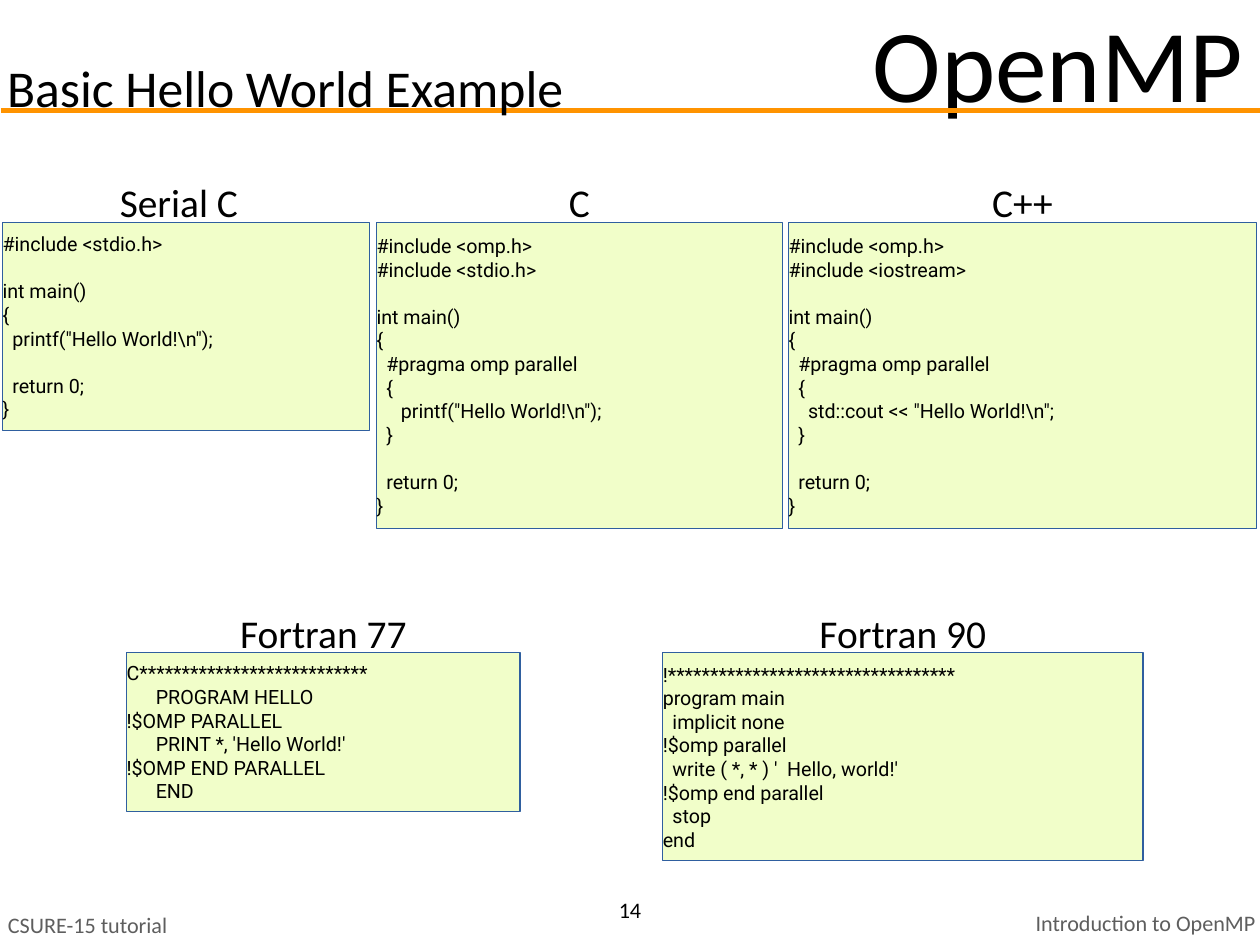
import pptx
import pptx.util
import pptx.dml.color
import pptx.enum.shapes
import pptx.enum.text
import pptx.oxml.ns
from lxml import etree

Inches, Pt = pptx.util.Inches, pptx.util.Pt
RGBColor = pptx.dml.color.RGBColor
ALIGN = pptx.enum.text.PP_ALIGN
ANCHOR = pptx.enum.text.MSO_ANCHOR
AUTO_SIZE = pptx.enum.text.MSO_AUTO_SIZE

BLACK = RGBColor(0x00, 0x00, 0x00)
GREY = RGBColor(0x5E, 0x5E, 0x5E)
ORANGE = RGBColor(0xFF, 0x93, 0x00)
LIME = RGBColor(0xF1, 0xFE, 0xC9)
BLUE = RGBColor(0x2F, 0x5F, 0x9F)

TITLE = dict(name="Calibri", size=Pt(84))
SUBTITLE = dict(name="Calibri", size=Pt(42))
LABEL = dict(name="Calibri", size=Pt(32))
FOOTER = dict(name="Calibri", size=Pt(18))
CODE = dict(name="Roboto", size=Pt(16))

LABEL_HEIGHT = 0.61
LABEL_RISE = 0.535  # from the top of a label to the top of its panel

SERIAL_C = r"""#include <stdio.h>

int main()
{
  printf("Hello World!\n");

  return 0;
}"""

OPENMP_C = r"""#include <omp.h>
#include <stdio.h>

int main()
{
  #pragma omp parallel
  {
     printf("Hello World!\n");
  }

  return 0;
}"""

OPENMP_CPP = r"""#include <omp.h>
#include <iostream>

int main()
{
  #pragma omp parallel
  {
    std::cout << "Hello World!\n";
  }

  return 0;
}"""

FORTRAN_77 = """C***************************
      PROGRAM HELLO
!$OMP PARALLEL
      PRINT *, 'Hello World!'
!$OMP END PARALLEL
      END"""

FORTRAN_90 = """!**********************************
program main
  implicit none
!$omp parallel
  write ( *, * ) '  Hello, world!'
!$omp end parallel
  stop
end"""

# label, label centre, label width, code, panel left, top, width, height
PANELS = [
    ("Serial C", 2.02, 1.54, SERIAL_C, 0.03, 2.51, 4.14, 2.35),
    ("C", 6.54, 0.44, OPENMP_C, 4.25, 2.51, 4.58, 3.46),
    ("C++", 11.54, 0.96, OPENMP_CPP, 8.9, 2.51, 5.28, 3.46),
    ("Fortran 77", 3.65, 2.06, FORTRAN_77, 1.43, 7.37, 4.44, 1.79),
    ("Fortran 90", 10.19, 2.06, FORTRAN_90, 7.48, 7.37, 5.42, 2.35),
]


def set_attributes(target, values):
    for name, value in values.items():
        setattr(target, name, value)


def place(box, left, top, width, height):
    set_attributes(box, dict(left=Inches(left), top=Inches(top),
                             width=Inches(width), height=Inches(height)))


def write_text(box, text, font, align=ALIGN.LEFT, color=BLACK, inset=0.06,
               wrap=True, anchor=ANCHOR.MIDDLE):
    """Fill a shape with one paragraph for each line of text."""
    frame = box.text_frame
    frame.text = text
    margin = Inches(inset)
    set_attributes(frame, dict(
        margin_left=margin, margin_right=margin, margin_top=margin,
        margin_bottom=margin, word_wrap=wrap, vertical_anchor=anchor,
        auto_size=AUTO_SIZE.NONE))
    for para in frame.paragraphs:
        para.alignment = align
        for target in [para, *para.runs]:
            set_attributes(target.font, font)
            target.font.color.rgb = color


def add_text(page, text, bounds, font, **options):
    box = page.shapes.add_textbox(*map(Inches, bounds))
    write_text(box, text, font, **options)


def add_rule(page):
    y = Inches(1.25)
    rule = page.shapes.add_connector(
        pptx.enum.shapes.MSO_CONNECTOR.STRAIGHT,
        Inches(0.01), y, Inches(14.22), y)
    rule.line.color.rgb = ORANGE
    rule.line.width = Pt(4)
    etree.SubElement(rule.element.spPr, pptx.oxml.ns.qn("a:effectLst"))


def add_code_panel(page, code, *bounds):
    panel = page.shapes.add_shape(
        pptx.enum.shapes.MSO_SHAPE.RECTANGLE, *map(Inches, bounds))
    panel.shadow.inherit = False
    panel.fill.solid()
    panel.fill.fore_color.rgb = LIME
    panel.line.color.rgb = BLUE
    panel.line.width = Pt(1)
    write_text(panel, code, CODE, inset=0)


def add_label(page, text, centre, width, panel_top):
    bounds = (centre - width / 2, panel_top - LABEL_RISE, width, LABEL_HEIGHT)
    add_text(page, text, bounds, LABEL, align=ALIGN.CENTER, wrap=False)


def main():
    deck = pptx.Presentation()
    deck.slide_width, deck.slide_height = Inches(14.22), Inches(10.67)
    page = deck.slides.add_slide(deck.slide_layouts.get_by_name("Title Only"))

    add_rule(page)
    title = page.shapes.title
    place(title, 0.65, -0.01, 13.44, 1.4)
    write_text(title, "OpenMP", TITLE, align=ALIGN.RIGHT)
    add_text(page, "Basic Hello World Example", (0.02, 0.57, 7.06, 0.82),
             SUBTITLE)

    for label, centre, label_width, code, left, top, width, height in PANELS:
        add_code_panel(page, code, left, top, width, height)
        add_label(page, label, centre, label_width, top)

    add_text(page, "CSURE-15 tutorial", (0.03, 10.23, 3.99, 0.42), FOOTER,
             color=GREY)
    add_text(page, "14", (6.92, 10.12, 0.38, 0.4), FOOTER, align=ALIGN.CENTER,
             inset=0, wrap=False, anchor=ANCHOR.TOP)
    add_text(page, "Introduction to OpenMP", (10.24, 10.22, 3.99, 0.4), FOOTER,
             align=ALIGN.RIGHT, color=GREY)

    deck.save("out.pptx")


if __name__ == "__main__":
    main()
